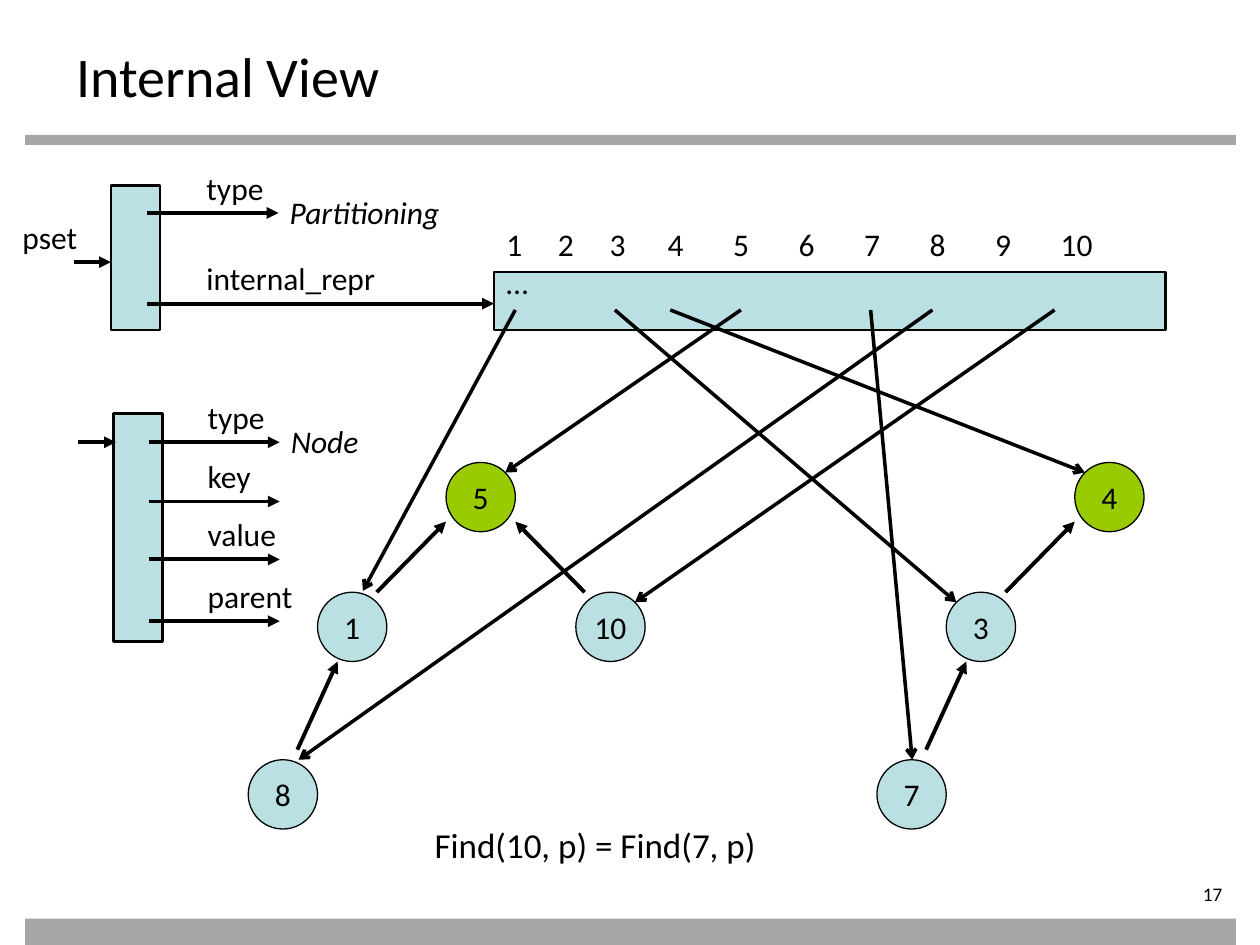
from lxml import etree
from pptx import Presentation
from pptx.dml.color import RGBColor
from pptx.enum.shapes import MSO_CONNECTOR, MSO_SHAPE
from pptx.enum.text import MSO_ANCHOR, PP_ALIGN
from pptx.oxml.ns import qn
from pptx.util import Inches, Pt

RECTANGLE, OVAL = MSO_SHAPE.RECTANGLE, MSO_SHAPE.OVAL
STRAIGHT = MSO_CONNECTOR.STRAIGHT
LEFT, CENTER, RIGHT = PP_ALIGN.LEFT, PP_ALIGN.CENTER, PP_ALIGN.RIGHT
MIDDLE = MSO_ANCHOR.MIDDLE

BLACK = RGBColor(0x00, 0x00, 0x00)
GRAY = RGBColor(0xA6, 0xA6, 0xA6)
PALE_BLUE = RGBColor(0xBB, 0xE0, 0xE3)
GREEN = RGBColor(0x99, 0xCC, 0x00)

NODE_SIZE = 0.55
TREE_SHIFT = 4.99  # distance from the left tree to the right one


class Diagram:
    def __init__(self, slide, font="Calibri"):
        self.slide = slide
        self.font = font

    def shape(self, kind, x, y, width, height, fill, line_width=None):
        shape = self.slide.shapes.add_shape(
            kind, Inches(x), Inches(y), Inches(width), Inches(height))
        shape.shadow.inherit = False
        shape.fill.solid()
        shape.fill.fore_color.rgb = fill
        if line_width is None:
            shape.line.fill.background()
        else:
            shape.line.color.rgb = BLACK
            shape.line.width = Pt(line_width)
        return shape

    def fill_text(self, frame, text, size, align=LEFT, italic=False):
        frame.text = text
        paragraph = frame.paragraphs[0]
        paragraph.alignment = align
        font = paragraph.font
        font.name, font.size, font.italic = self.font, Pt(size), italic
        font.color.rgb = BLACK

    def text(self, x, y, width, text, height=0.4, size=18, wrap=False,
             align=LEFT, italic=False):
        box = self.slide.shapes.add_textbox(
            Inches(x), Inches(y), Inches(width), Inches(height))
        box.text_frame.word_wrap = wrap
        self.fill_text(box.text_frame, text, size, align, italic)
        return box.text_frame

    def node(self, x, y, key, fill=PALE_BLUE):
        circle = self.shape(OVAL, x, y, NODE_SIZE, NODE_SIZE, fill, 0.75)
        frame = circle.text_frame
        frame.word_wrap = False
        frame.vertical_anchor = MIDDLE
        self.fill_text(frame, str(key), 18, CENTER)

    def arrow(self, x1, y1, x2, y2, width=2.25, head="triangle"):
        connector = self.slide.shapes.add_connector(
            STRAIGHT, Inches(x1), Inches(y1), Inches(x2), Inches(y2))
        connector.line.color.rgb = BLACK
        connector.line.width = Pt(width)
        properties = connector._element.spPr
        etree.SubElement(properties.find(qn("a:ln")), qn("a:tailEnd"), type=head)
        etree.SubElement(properties, qn("a:effectLst"))

    def index_row(self, x, y, width, stops):
        """Number the array slots, each at its own tab stop."""
        numbers = "\t".join(str(n) for n in range(1, len(stops) + 2))
        frame = self.text(x, y, width, numbers + "\v…", wrap=True)
        properties = frame.paragraphs[0]._p.get_or_add_pPr()
        tabs = etree.Element(qn("a:tabLst"))
        properties.insert(0, tabs)
        for stop in stops:
            etree.SubElement(tabs, qn("a:tab"), pos=str(Inches(stop)), algn="l")


def main():
    presentation = Presentation()
    presentation.slide_width, presentation.slide_height = Inches(10), Inches(7.5)
    diagram = Diagram(presentation.slides.add_slide(presentation.slide_layouts[6]))

    # Frame of the slide
    for y, height in ((1.07, 0.08), (7.29, 0.21)):
        diagram.shape(RECTANGLE, 0.2, y, 9.61, height, GRAY)
    diagram.text(0.51, 0.28, 9, "Internal View", 0.55, 32, wrap=True)
    page = diagram.text(8.7, 7, 1.1, "17", 0.22, 11, wrap=True, align=RIGHT)
    page.margin_left = page.margin_top = page.margin_bottom = 0

    # Array and the two records
    diagram.shape(RECTANGLE, 3.92, 2.16, 5.33, 0.46, PALE_BLUE, 1.5)
    diagram.shape(RECTANGLE, 0.88, 1.47, 0.39, 1.15, PALE_BLUE, 1.5)
    diagram.shape(RECTANGLE, 0.9, 3.28, 0.39, 1.81, PALE_BLUE, 1.5)
    diagram.index_row(3.92, 1.74, 5.09,
                      [0.41, 0.82] + [1.28 + 0.52 * i for i in range(7)])

    diagram.text(0.08, 1.68, 0.71, "pset", wrap=True)
    diagram.arrow(0.59, 2.08, 0.88, 2.08)
    diagram.arrow(0.62, 3.51, 0.92, 3.51)

    # Record fields: start x, y, end x, label, label width, wrap
    fields = (
        (1.17, 1.69, 2.21, "type", 0.68, False),
        (1.17, 2.41, 3.92, "internal_repr", 1.58, False),
        (1.18, 3.51, 2.22, "type", 0.68, False),
        (1.18, 3.98, 2.22, "key", 0.57, True),
        (1.18, 4.44, 2.22, "value", 1.28, True),
        (1.18, 4.93, 2.22, "parent", 1.28, True),
    )
    for start, y, end, label, width, wrap in fields:
        diagram.arrow(start, y, end, y)
        diagram.text(start + 0.37, y - 0.4, width, label, wrap=wrap)
    diagram.text(2.2, 1.48, 1.45, "Partitioning", italic=True)
    diagram.text(2.21, 3.3, 0.74, "Node", italic=True)

    # Two trees of the same form; the left one has an extra child
    for shift, (root, child, leaf) in ((0, (5, 1, 8)), (TREE_SHIFT, (4, 3, 7))):
        diagram.node(3.54 + shift, 3.67, root, GREEN)
        diagram.node(2.52 + shift, 4.7, child)
        diagram.node(1.97 + shift, 6.03, leaf)
        diagram.arrow(2.99 + shift, 4.7, 3.54 + shift, 4.14)
        diagram.arrow(2.36 + shift, 5.95, 2.68 + shift, 5.25)
    diagram.node(4.57, 4.7, 10)
    diagram.arrow(4.64, 4.7, 4.09, 4.14)

    # Array slot to node: slot x, node x, node y
    pointers = (
        (4.09, 2.88, 4.69), (4.88, 7.59, 4.78), (5.32, 8.61, 3.75),
        (5.88, 4.01, 3.75), (6.91, 7.24, 6.03), (7.4, 2.37, 6.03),
        (8.37, 5.04, 4.78),
    )
    for slot_x, node_x, node_y in pointers:
        diagram.arrow(slot_x, 2.46, node_x, node_y, 2, "arrow")

    diagram.text(3.35, 6.49, 2.82, "Find(10, p) = Find(7, p)", 0.44, 20)
    presentation.save("out.pptx")


if __name__ == "__main__":
    main()
